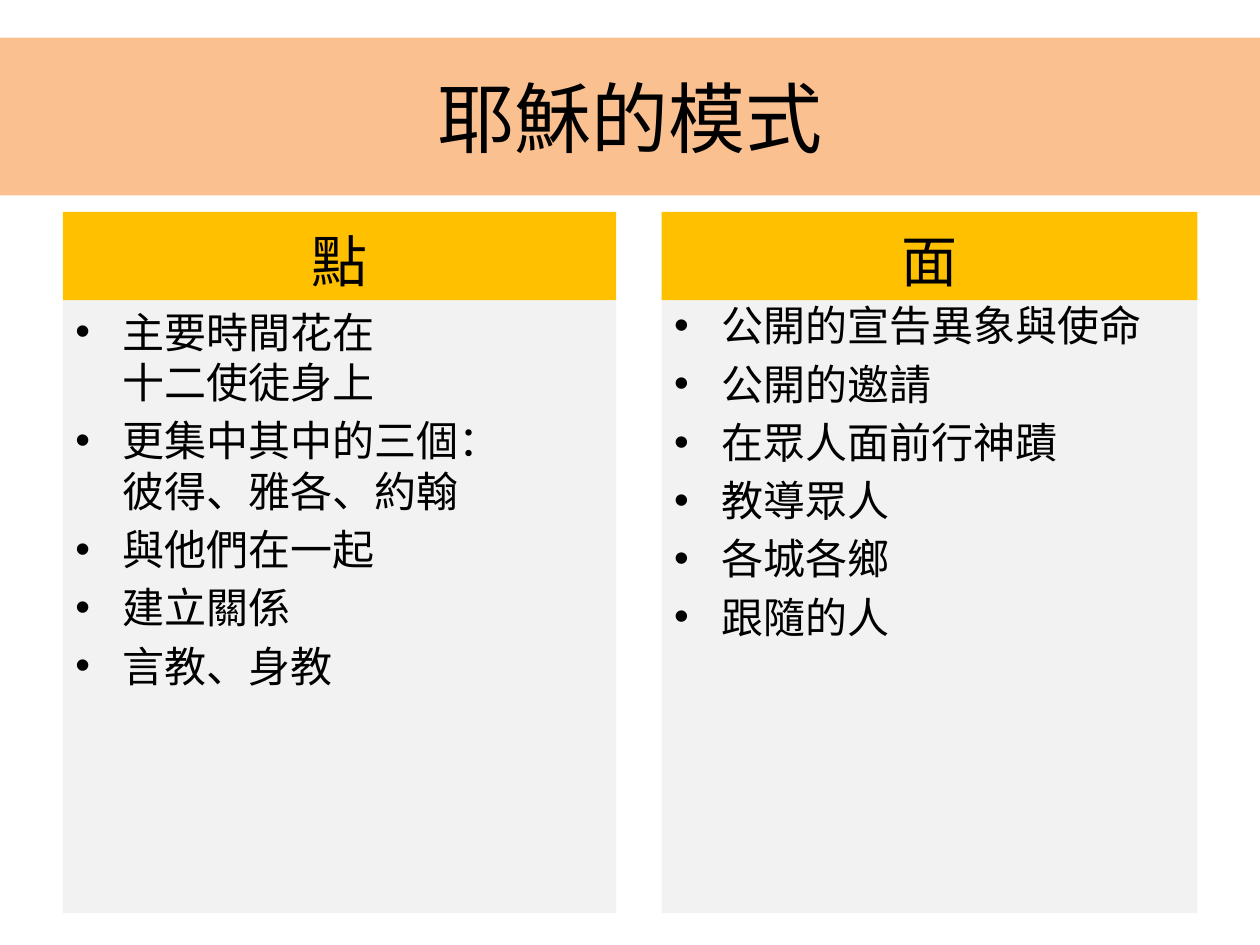
from lxml import etree
from pptx import Presentation, util as u
from pptx.dml.color import RGBColor
from pptx.enum import text
from pptx.oxml.ns import qn

Cm, Pt = u.Cm, u.Pt
hues = {"band": "FAC090", "head": "FFC000", "body": "F2F2F2", "ink": "000000"}

deck = Presentation()
deck.slide_width, deck.slide_height = Cm(25.4), Cm(19.05)
slide = deck.slides.add_slide(deck.slide_layouts[6])


def add_box(area, hue, lines, size, gap, align, anchor):
    box = slide.shapes.add_textbox(*[Cm(n) for n in area])
    box.fill.solid()
    box.fill.fore_color.rgb = RGBColor.from_string(hues[hue])
    frame = box.text_frame
    frame.word_wrap = True
    frame.vertical_anchor = anchor
    frame.text = "\n".join(lines)
    for para in frame.paragraphs:
        para.alignment = align
        para.space_before = Pt(gap)
        para.font.size = Pt(size)
        para.font.name = "Calibri"
        para.font.color.rgb = RGBColor.from_string(hues["ink"])
    return frame


def add_dot(para):
    props = para._p.get_or_add_pPr()
    props.set("marL", str(Cm(0.95)))
    props.set("indent", str(-Cm(0.95)))
    dot = etree.Element(qn("a:buChar"), char="•")
    font = etree.Element(qn("a:buFont"), typeface="Arial")
    spot = props.find(qn("a:defRPr"))
    spot.addprevious(font)
    spot.addprevious(dot)


mid, left = text.PP_ALIGN.CENTER, text.PP_ALIGN.LEFT
side = text.MSO_ANCHOR
add_box((0, 0.76, 25.4, 3.18), "band", ["耶穌的模式"], 44, 0, mid, side.MIDDLE)

cols = [
    (1.27, 11.15, 6.05, "點", [
        "主要時間花在\v十二使徒身上",
        "更集中其中的三個：\v彼得、雅各、約翰",
        "與他們在一起",
        "建立關係",
        "言教、身教",
    ]),
    (13.34, 10.8, 5.92, "面", [
        "公開的宣告異象與使命",
        "公開的邀請",
        "在眾人面前行神蹟",
        "教導眾人",
        "各城各鄉",
        "跟隨的人",
    ]),
]
foot = 18.41
for x, wide, top, head, items in cols:
    body = add_box((x, top, wide, foot - top), "body", items, 24, 4.5, left, side.TOP)
    for para in body.paragraphs:
        add_dot(para)
    add_box((x, 4.27, wide, 1.78), "head", [head], 32, 6.4, mid, side.BOTTOM)

deck.save("out.pptx")
